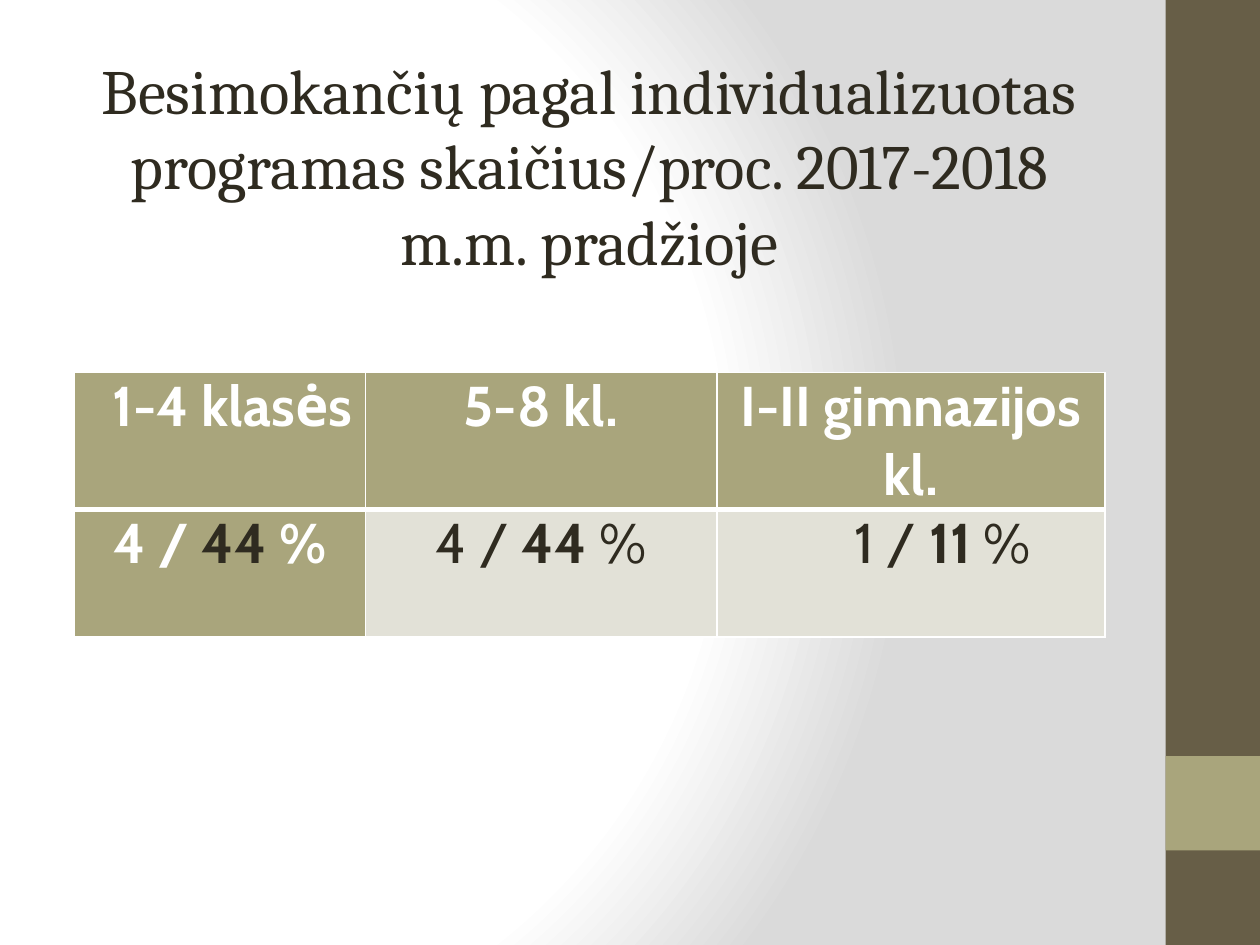
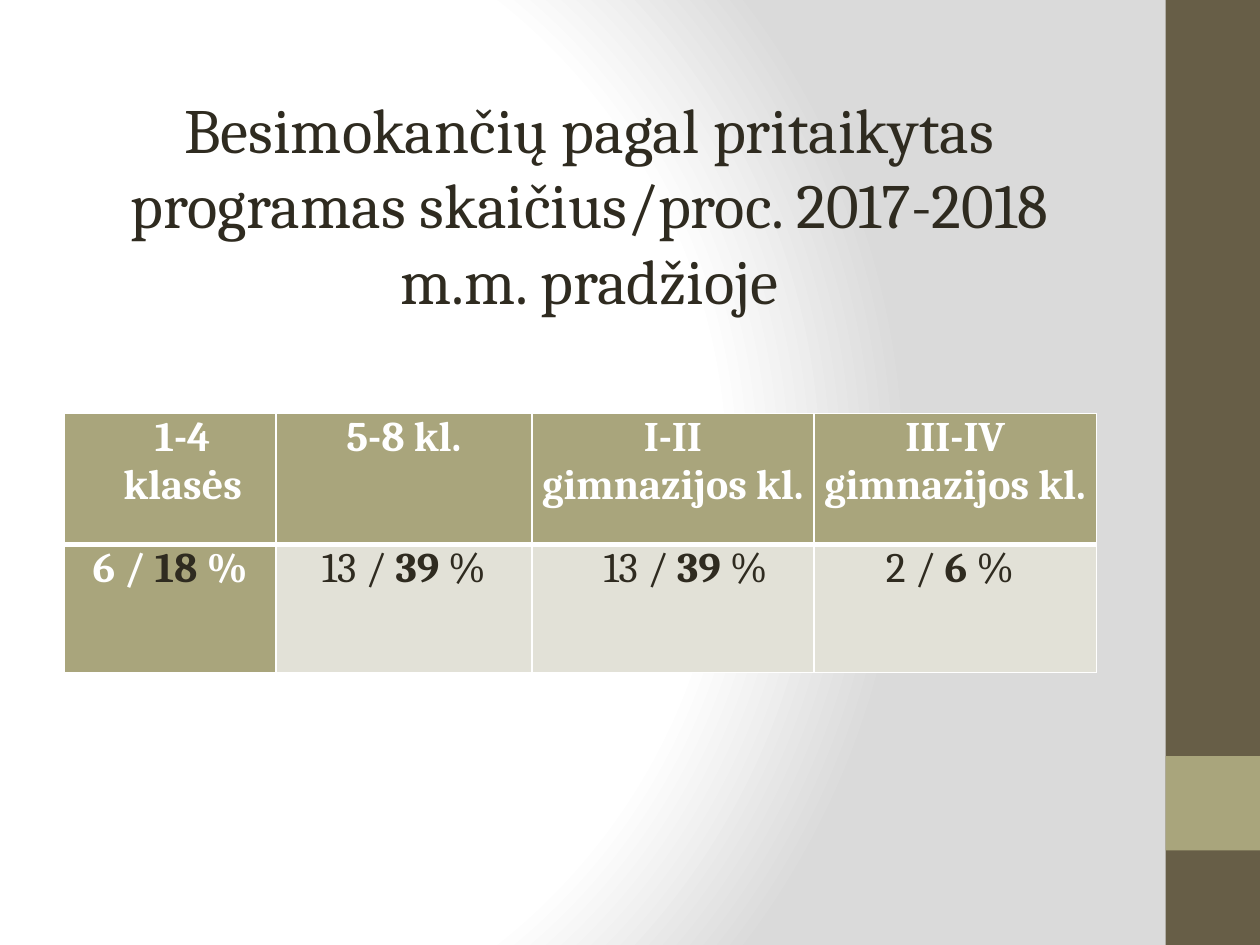
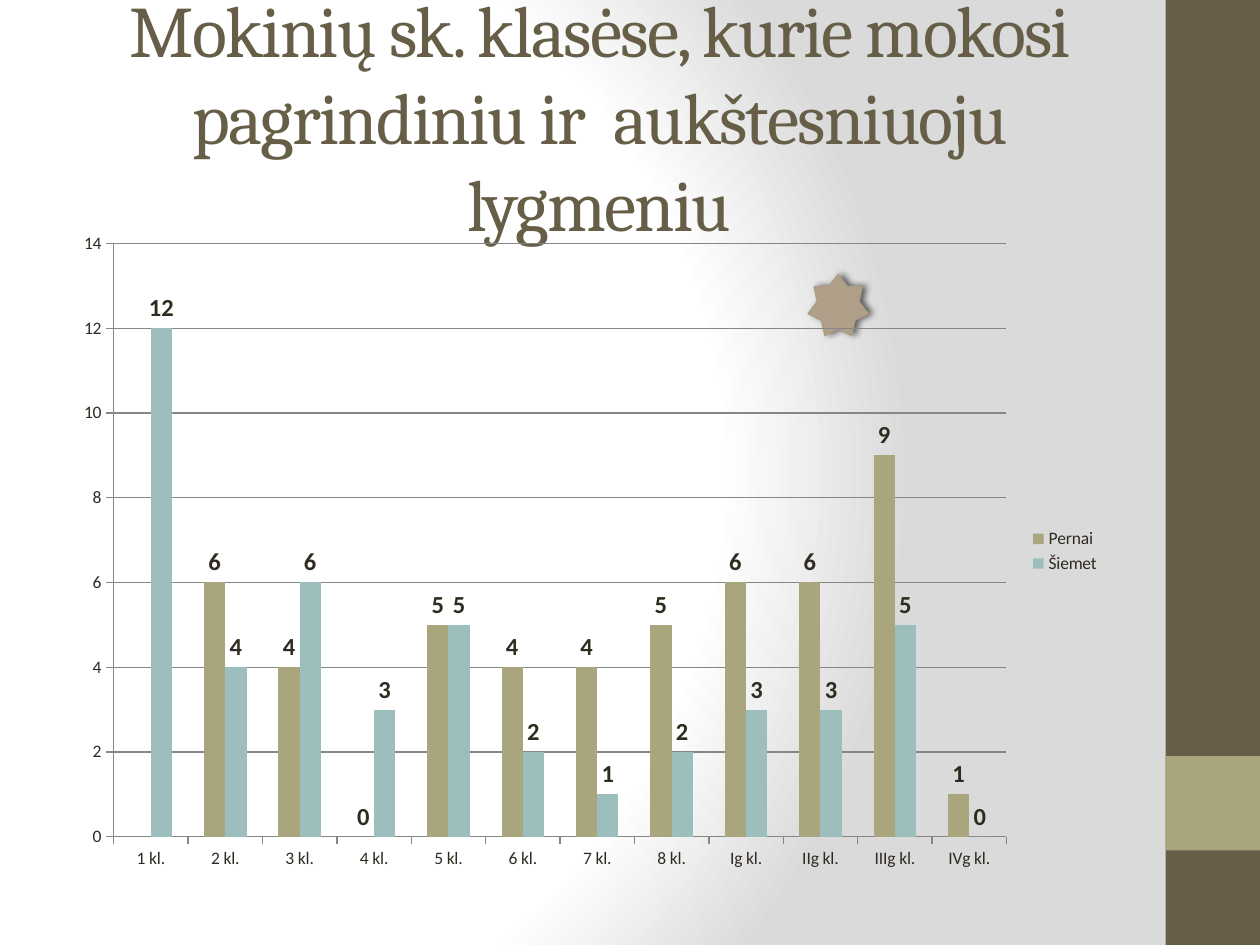
from dataclasses import dataclass
from typing import NamedTuple

from pptx import Presentation
from pptx.chart.data import CategoryChartData
from pptx.dml.color import RGBColor
from pptx.enum.chart import XL_CHART_TYPE as ChartType
from pptx.enum.chart import XL_LABEL_POSITION as LabelPosition
from pptx.enum.chart import XL_LEGEND_POSITION as LegendPosition
from pptx.enum.chart import XL_TICK_MARK as TickMark
from pptx.enum.shapes import MSO_SHAPE as Preset
from pptx.enum.text import MSO_ANCHOR as Anchor
from pptx.enum.text import MSO_AUTO_SIZE as AutoSize
from pptx.enum.text import PP_ALIGN as Align
from pptx.oxml import parse_xml
from pptx.oxml.ns import nsdecls, qn
from pptx.util import Pt

COLORS = {
    "white": "FFFFFF",
    "haze": "DADADA",
    "ink": "2F2B20",
    "bark": "675E47",
    "olive": "A9A57C",
    "pale": "E2E1D7",
    "aqua": "9CBEBD",
    "star": "B1A089",
    "star_edge": "AE9D85",
    "axis": "868686",
    "shadow": "000000",
}
SERIF = "Cambria"
SANS = "Cabin"
CHART_FONT = "Calibri"
TITLE_SIZE = (600, 90)
ROW_HEIGHTS = (75, 73)


class Band(NamedTuple):
    top: float
    height: float
    color: str


class Column(NamedTuple):
    width: float
    heading: str
    count: int
    share: int
    heading_indent: float = 0
    indent: float = 0
    align: Align = Align.CENTER


class Series(NamedTuple):
    name: str
    values: tuple
    color: str


@dataclass
class TablePage:
    title: str
    title_top: float
    left: float
    top: float
    font: str
    size: float
    columns: list[Column]


BANDS = [Band(0, 540, "bark"), Band(432, 54, "olive")]

TABLE_PAGES = [
    TablePage(
        "Besimokančių pagal individualizuotas programas skaičius/proc. 2017-2018 m.m. pradžioje",
        49, 42.5, 213, SANS, 32,
        [
            Column(166.3, "1-4 klasės", 4, 44, heading_indent=14.4),
            Column(200.9, "5-8 kl.", 4, 44),
            Column(221.8, "I-II gimnazijos kl.", 1, 11, indent=36),
        ],
    ),
    TablePage(
        "Besimokančių pagal pritaikytas programas skaičius/proc. 2017-2018 m.m. pradžioje",
        71.3, 36.7, 236.2, SERIF, 24,
        [
            Column(121, "1-4 klasės", 6, 18, heading_indent=14.4),
            Column(146.2, "5-8 kl.", 13, 39),
            Column(161.3, "I-II gimnazijos kl.", 13, 39, indent=36, align=Align.LEFT),
            Column(161.3, "III-IV gimnazijos kl.", 2, 6, indent=36, align=Align.LEFT),
        ],
    ),
]

CHART_TITLE = "Mokinių sk. klasėse, kurie mokosi pagrindiniu ir  aukštesniuoju lygmeniu"
CLASSES = [f"{name} kl." for name in (*range(1, 9), "Ig", "IIg", "IIIg", "IVg")]
SERIES = [
    Series("Pernai", (None, 6, 4, 0, 5, 4, 4, 5, 6, 6, 9, 1), "olive"),
    Series("Šiemet", (12, 4, 6, 3, 5, 2, 1, 2, 3, 3, 5, 0), "aqua"),
]


def rgb(color: str) -> RGBColor:
    return RGBColor.from_string(COLORS[color])


def paint(fill, color: str) -> None:
    fill.solid()
    fill.fore_color.rgb = rgb(color)


def style_font(font, name: str, size: float, color: str, bold: bool = False) -> None:
    font.name = name
    font.size = Pt(size)
    font.bold = bold
    font.color.rgb = rgb(color)


def set_background(master) -> None:
    master.background.fill.gradient()
    stops = "".join(
        f'<a:gs pos="{position * 1000}"><a:srgbClr val="{COLORS[color]}"/></a:gs>'
        for position, color in ((0, "white"), (75, "white"), (100, "haze"))
    )
    gradient = parse_xml(
        f'<a:gradFill rotWithShape="1" {nsdecls("a")}><a:gsLst>{stops}</a:gsLst>'
        '<a:path path="circle"><a:fillToRect l="20000" t="50000" r="100000" b="50000"/>'
        "</a:path></a:gradFill>"
    )
    plain = master.element.find(".//" + qn("a:gradFill"))
    plain.getparent().replace(plain, gradient)


def add_bands(master, page) -> None:
    for index, band in enumerate(BANDS):
        box = page.shapes.add_shape(
            Preset.RECTANGLE, Pt(666), Pt(band.top), Pt(54), Pt(band.height)
        )
        box.shadow.inherit = False
        paint(box.fill, band.color)
        box.line.fill.background()
        master.shapes.element.insert(2 + index, box.element)


def set_title(page, text: str, left: float, top: float, size: float, color: str):
    title = page.shapes.title
    title.left, title.top = Pt(left), Pt(top)
    title.width, title.height = map(Pt, TITLE_SIZE)
    frame = title.text_frame
    frame.text = text
    frame.word_wrap = True
    frame.auto_size = AutoSize.NONE
    frame.vertical_anchor = Anchor.MIDDLE
    para = frame.paragraphs[0]
    para.alignment = Align.CENTER
    span = para.runs[0]
    style_font(span.font, SERIF, size, color)
    return span


def set_borders(cell, top: float, bottom: float) -> None:
    properties = cell._tc.get_or_add_tcPr()
    widths = {"lnL": 1, "lnR": 1, "lnT": top, "lnB": bottom}
    for index, (side, width) in enumerate(widths.items()):
        properties.insert(index, parse_xml(
            f'<a:{side} w="{Pt(width)}" {nsdecls("a")}><a:solidFill>'
            f'<a:srgbClr val="{COLORS["white"]}"/></a:solidFill></a:{side}>'
        ))


def prepare_cell(cell, fill: str, indent: float, align: Align):
    cell.margin_left = cell.margin_right = Pt(5)
    cell.margin_top = cell.margin_bottom = 0
    paint(cell.fill, fill)
    para = cell.text_frame.paragraphs[0]
    para.alignment = align
    if indent:
        properties = para._p.get_or_add_pPr()
        properties.set("marL", str(Pt(indent)))
        properties.set("indent", "0")
    return para


def fill_heading(cell, column: Column, content: TablePage) -> None:
    para = prepare_cell(cell, "olive", column.heading_indent, Align.CENTER)
    para.text = column.heading
    style_font(para.runs[0].font, content.font, content.size, "white", True)
    set_borders(cell, 1, 3)


def fill_count(cell, column: Column, content: TablePage, first: bool) -> None:
    para = prepare_cell(cell, "olive" if first else "pale", column.indent, column.align)
    color = "white" if first else "ink"
    pieces = (
        (f"{column.count} / ", color, first),
        (f"{column.share} ", "ink", True),
        ("%", color, first),
    )
    for text, piece_color, bold in pieces:
        span = para.add_run()
        span.text = text
        style_font(span.font, content.font, content.size, piece_color, bold)
    set_borders(cell, 3, 1)


def add_count_table(page, content: TablePage) -> None:
    columns = content.columns
    table = page.shapes.add_table(
        len(ROW_HEIGHTS), len(columns), Pt(content.left), Pt(content.top),
        Pt(sum(column.width for column in columns)), Pt(sum(ROW_HEIGHTS)),
    ).table
    table.first_col = True
    for row, height in zip(table.rows, ROW_HEIGHTS):
        row.height = Pt(height)
    for index, column in enumerate(columns):
        table.columns[index].width = Pt(column.width)
        fill_heading(table.cell(0, index), column, content)
        fill_count(table.cell(1, index), column, content, index == 0)


def add_star(page) -> None:
    star = page.shapes.add_shape(Preset.STAR_7_POINT, Pt(462), Pt(157), Pt(34), Pt(34.5))
    paint(star.fill, "star")
    star.line.color.rgb = rgb("star_edge")
    star.line.width = Pt(1)
    star.shadow.inherit = False
    star.element.spPr.find(qn("a:effectLst")).append(parse_xml(
        f'<a:outerShdw blurRad="{Pt(4)}" dist="{Pt(2)}" dir="0" rotWithShape="0" {nsdecls("a")}>'
        f'<a:srgbClr val="{COLORS["shadow"]}"><a:alpha val="60000"/></a:srgbClr></a:outerShdw>'
    ))


def add_class_chart(page) -> None:
    data = CategoryChartData()
    data.categories = CLASSES
    for series in SERIES:
        data.add_series(series.name, series.values)
    chart = page.shapes.add_chart(
        ChartType.COLUMN_CLUSTERED, Pt(36), Pt(126), Pt(600), Pt(378), data
    ).chart
    style_font(chart.font, CHART_FONT, 10, "ink")
    chart.has_title = False
    chart.has_legend = True
    chart.legend.position = LegendPosition.RIGHT
    chart.legend.include_in_layout = False

    values = chart.value_axis
    values.minimum_scale, values.maximum_scale, values.major_unit = 0, 14, 2
    values.has_major_gridlines = True
    for axis in (chart.category_axis, values):
        axis.major_tick_mark = TickMark.OUTSIDE
        axis.minor_tick_mark = TickMark.NONE
    for line in (chart.category_axis.format.line, values.format.line,
                 values.major_gridlines.format.line):
        line.color.rgb = rgb("axis")
        line.width = Pt(0.75)

    plot = chart.plots[0]
    plot.gap_width = 150
    plot.overlap = 0
    plot.vary_by_categories = False
    for drawn, series in zip(plot.series, SERIES):
        paint(drawn.format.fill, series.color)
        drawn.invert_if_negative = False
        labels = drawn.data_labels
        labels.show_value = True
        labels.position = LabelPosition.OUTSIDE_END
        style_font(labels.font, CHART_FONT, 14, "ink", True)


def main() -> None:
    deck = Presentation()
    deck.slide_width, deck.slide_height = Pt(720), Pt(540)
    master = deck.slide_master
    set_background(master)
    layout = deck.slide_layouts.get_by_name("Title Only")

    for content in TABLE_PAGES:
        page = deck.slides.add_slide(layout)
        set_title(page, content.title, 36.7, content.title_top, 36, "ink")
        add_count_table(page, content)

    page = deck.slides.add_slide(layout)
    add_bands(master, page)
    span = set_title(page, CHART_TITLE, 42.5, 21, 41.4, "bark")
    span.font._element.set("spc", "-100")
    add_star(page)
    add_class_chart(page)
    deck.save("out.pptx")


if __name__ == "__main__":
    main()
